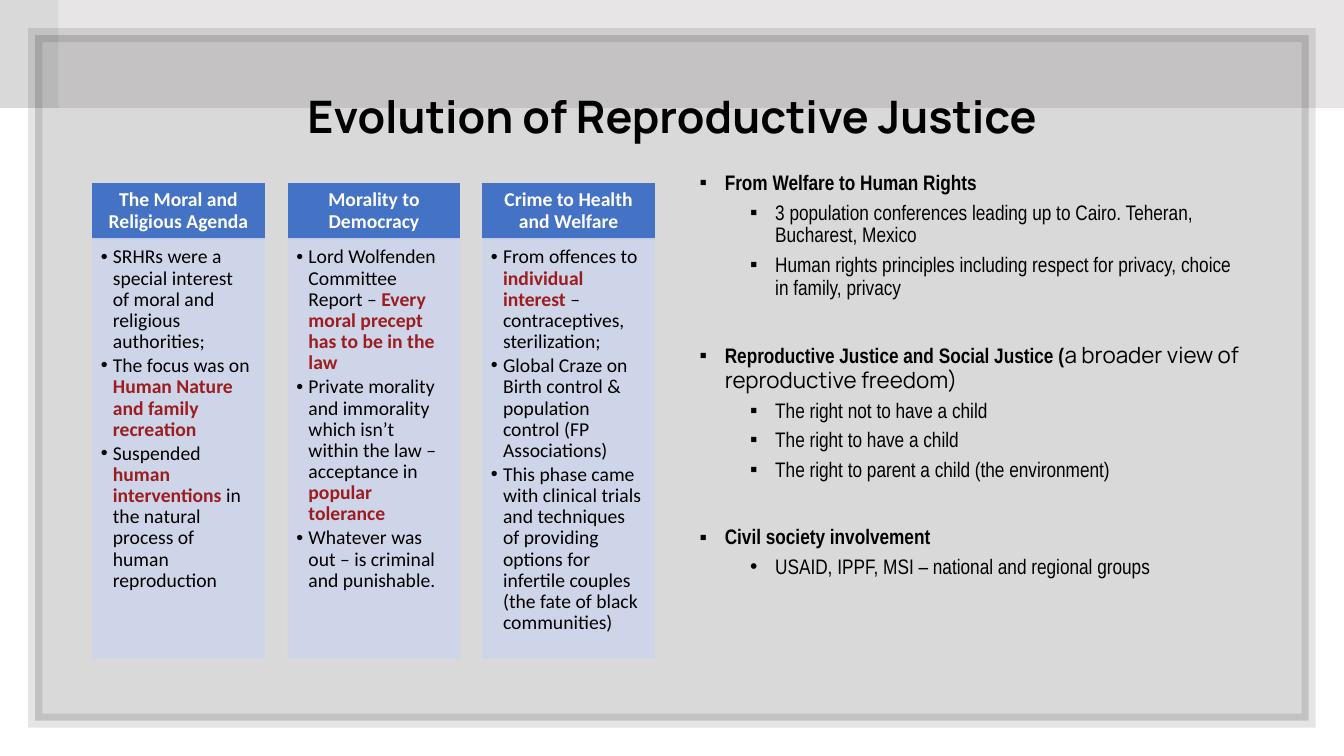
from lxml.etree import SubElement
from pptx import Presentation
from pptx.dml.color import RGBColor
from pptx.enum.shapes import MSO_SHAPE
from pptx.enum.text import MSO_ANCHOR, PP_ALIGN
from pptx.oxml.ns import qn
from pptx.util import Pt

PX = 9144  # 100 px to the inch
COLOURS = {
    "band": "E7E5E6", "corner": "D9D9D9", "black": "000000", "white": "FFFFFF",
    "header": "4472C4", "column": "CFD5EA", "emphasis": "9C1D20",
}

presentation = Presentation()
presentation.slide_width = 1333 * PX
presentation.slide_height = 750 * PX
slide = presentation.slides.add_slide(presentation.slide_layouts[5])


def add_box(left, top, width, height, fill, fill_alpha=100, line_width=0, line_alpha=100):
    box = slide.shapes.add_shape(
        MSO_SHAPE.RECTANGLE, left * PX, top * PX, width * PX, height * PX)
    box.shadow.inherit = False
    box.fill.solid()
    box.fill.fore_color.rgb = RGBColor.from_string(COLOURS[fill])
    if line_width:
        box.line.width = Pt(line_width)
        box.line.color.rgb = RGBColor.from_string(COLOURS[fill])
        line = box.line._ln
        SubElement(line, qn("a:miter"), lim="800000")
    else:
        box.line.fill.background()
    properties = box._element.spPr
    for parent, alpha in ((properties, fill_alpha), (properties.find(qn("a:ln")), line_alpha)):
        colour = parent.find(qn("a:solidFill") + "/" + qn("a:srgbClr"))
        if colour is not None and alpha < 100:
            SubElement(colour, qn("a:alpha"), val=str(alpha * 1000))
    return box


def write_paragraph(frame, runs, bullet="", indent=0, hanging=0, level=0,
                    before=0, after=0, align=PP_ALIGN.LEFT):
    """Each run is (text, font, size, bold, colour)."""
    paragraph = frame.paragraphs[0]
    if paragraph.runs:
        paragraph = frame.add_paragraph()
    if bullet:
        properties = paragraph._p.get_or_add_pPr()
        properties.set("marL", str(indent * PX))
        properties.set("indent", str(-hanging * PX))
        SubElement(properties, qn("a:buFont"), typeface="Arial")
        SubElement(properties, qn("a:buChar"), char=bullet)
    paragraph.level = level
    paragraph.alignment = align
    paragraph.line_spacing = 0.9
    paragraph.space_before = Pt(before)
    paragraph.space_after = Pt(after)
    for text, font, size, bold, colour in runs:
        run = paragraph.add_run()
        run.text = text
        run.font.name = font
        run.font.size = Pt(size)
        run.font.bold = bold
        run.font.color.rgb = RGBColor.from_string(COLOURS[colour])


# Backdrop: top band, corner and translucent frame
add_box(0, 0, 1333, 107, "band")
add_box(0, 0, 58, 107, "corner")
add_box(35, 35, 1263, 680, "black", 15, 10, 10)

# Title, brought in front of the backdrop
title = slide.shapes.title
slide.shapes._spTree.append(title._element)
title.left, title.top, title.width, title.height = 92 * PX, 73 * PX, 1150 * PX, 145 * PX
title.text_frame.vertical_anchor = MSO_ANCHOR.MIDDLE
title.text_frame.margin_bottom = 60 * PX
write_paragraph(title.text_frame,
                [("Evolution of Reproductive Justice", "Manrope", 32, True, "black")],
                align=PP_ALIGN.CENTER)

# Three phases: heading, then bullets made of (text, emphasised) runs
phases = [
    ("The Moral and Religious Agenda", [
        [("SRHRs were a special interest of moral and religious authorities;", False)],
        [("The focus was on ", False), ("Human Nature and family recreation", True)],
        [("Suspended ", False), ("human interventions ", True),
         ("in the natural process of human reproduction", False)],
    ]),
    ("Morality to Democracy", [
        [("Lord Wolfenden Committee Report – ", False),
         ("Every moral precept has to be in the law", True)],
        [("Private morality and immorality which isn’t within the law – acceptance in ", False),
         ("popular tolerance", True)],
        [("Whatever was out – is criminal and punishable.", False)],
    ]),
    ("Crime to Health and Welfare", [
        [("From offences to ", False), ("individual interest ", True),
         ("– contraceptives, sterilization;", False)],
        [("Global Craze on Birth control & population control (FP Associations)", False)],
        [("This phase came with clinical trials and techniques of providing options for "
          "infertile couples (the fate of black communities)", False)],
    ]),
]
for index, (heading, bullets) in enumerate(phases):
    left = 92 + round(index * 193.5)
    header = add_box(left, 182, 170, 55, "header", line_width=1)
    column = add_box(left, 237, 170, 416, "column", 90, 1, 90)
    for box, anchor, margins in ((header, MSO_ANCHOR.MIDDLE, (11, 6, 11, 6)),
                                 (column, MSO_ANCHOR.TOP, (8, 8, 11, 12))):
        frame = box.text_frame
        frame.word_wrap = True
        frame.vertical_anchor = anchor
        (frame.margin_left, frame.margin_top,
         frame.margin_right, frame.margin_bottom) = [margin * PX for margin in margins]
    write_paragraph(header.text_frame, [(heading, "Calibri", 14, True, "white")],
                    align=PP_ALIGN.CENTER)
    for bullet_runs in bullets:
        runs = [(text, "Calibri", 14, strong, "emphasis" if strong else "black")
                for text, strong in bullet_runs]
        write_paragraph(column.text_frame, runs, "•", 12, 12, level=1, after=2)

# Right-hand outline: heading, lighter ending, bullet of the points, points
topics = [
    ("From Welfare to Human Rights", "", "▪", [
        "3 population conferences leading up to Cairo. Teheran, Bucharest, Mexico",
        "Human rights principles including respect for privacy, choice in family, privacy",
    ]),
    ("Reproductive Justice and Social Justice (", "a broader view of reproductive freedom)", "▪", [
        "The right not to have a child",
        "The right to have a child",
        "The right to parent a child (the environment)",
    ]),
    ("Civil society involvement", "", "•", [
        "USAID, IPPF, MSI – national and regional groups",
    ]),
]
outline = slide.shapes.add_textbox(684 * PX, 166 * PX, 558 * PX, 488 * PX).text_frame
outline.word_wrap = True
for index, (heading, ending, bullet, points) in enumerate(topics):
    runs = [(heading, "Arial Narrow", 15, True, "black")]
    if ending:
        runs.append((ending, "Manrope", 16, False, "black"))
    write_paragraph(outline, runs, "▪", 25, 25, before=32 if index else 0)
    for point in points:
        write_paragraph(outline, [(point, "Arial Narrow", 15, False, "black")],
                        bullet, 75, 25, level=1, before=5)

presentation.save("out.pptx")
